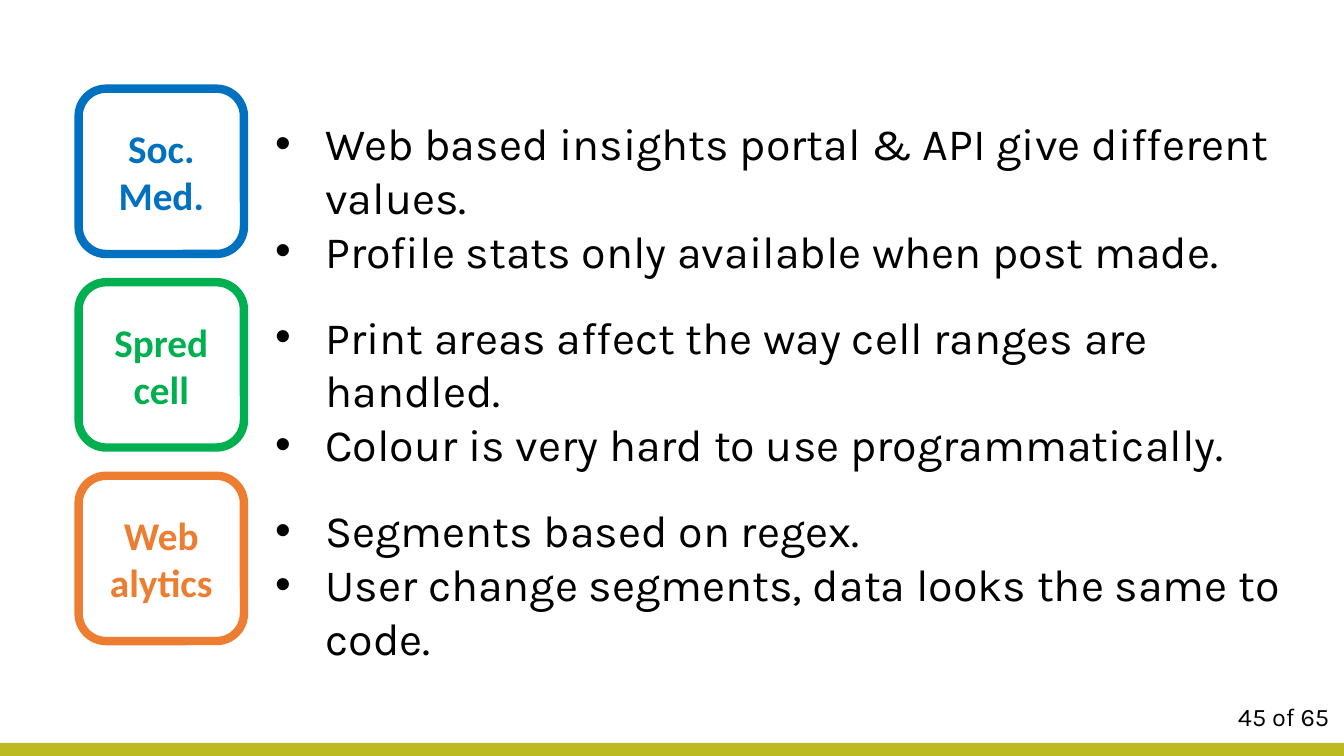
"""Build a slide of data source quirks, one badge and bullet list per source."""
from lxml.etree import SubElement as Sub
from pptx import Presentation
from pptx.dml.color import RGBColor as RGB
from pptx.enum.shapes import MSO_SHAPE as Kind
from pptx.enum.text import MSO_ANCHOR as Anchor, MSO_AUTO_SIZE as Auto, PP_ALIGN as Align
from pptx.oxml.ns import qn
from pptx.util import Emu, Pt

SCALE = 9144
WIDE, HIGH = 1333, 750
PITCH = 192
BLUE = RGB(0x00, 0x70, 0xC0)
GREEN = RGB(0x00, 0xB0, 0x50)
ORANGE = RGB(0xED, 0x7D, 0x31)
OLIVE = RGB(0xBB, 0xBB, 0x21)
WHITE = RGB(0xFF, 0xFF, 0xFF)
BLACK = RGB(0x00, 0x00, 0x00)

TOPICS = [
    ("Soc.\nMed.", BLUE,
     "Web based insights portal & API give different values.\n"
     "Profile stats only available when post made."),
    ("Spred\ncell", GREEN,
     "Print areas affect the way cell ranges are handled.\n"
     "Colour is very hard to use programmatically."),
    ("Web\nalytics", ORANGE,
     "Segments based on regex.\n"
     "User change segments, data looks the same to code."),
]


def px(num):
    return Emu(num * SCALE)


def write(frame, text, font, size, color, bold=False):
    frame.word_wrap = True
    frame.text = text
    for para in frame.paragraphs:
        for run in para.runs:
            run.font.name = font
            run.font.size = Pt(size)
            run.font.bold = bold
            run.font.color.rgb = color


def add_box(slide, kind, area, fill):
    box = slide.shapes.add_shape(kind, *map(px, area))
    box.shadow.inherit = False
    box.fill.solid()
    box.fill.fore_color.rgb = fill
    box.line.fill.background()
    return box


def add_badge(slide, top, text, color):
    badge = add_box(slide, Kind.ROUNDED_RECTANGLE, (78, top, 164, 164), WHITE)
    badge.line.color.rgb = color
    badge.line.width = Pt(6)
    frame = badge.text_frame
    frame.vertical_anchor = Anchor.MIDDLE
    write(frame, text, "Calibri", 28, color, True)
    for para in frame.paragraphs:
        para.alignment = Align.CENTER


def add_text(slide, area, text, size):
    frame = slide.shapes.add_textbox(*map(px, area)).text_frame
    frame.auto_size = Auto.SHAPE_TO_FIT_TEXT
    write(frame, text, "Karla", size, BLACK)
    return frame


def add_list(slide, top, text):
    frame = add_text(slide, (263, top, 1070, 118), text, 32)
    for para in frame.paragraphs:
        props = para._p.get_or_add_pPr()
        props.set("marL", str(px(50)))
        props.set("indent", str(px(-50)))
        Sub(props, qn("a:buFont"), typeface="Arial")
        Sub(props, qn("a:buChar"), char="•")


def main():
    deck = Presentation()
    deck.slide_width, deck.slide_height = px(WIDE), px(HIGH)
    slide = deck.slides.add_slide(deck.slide_layouts[6])
    add_box(slide, Kind.RECTANGLE, (0, 737, WIDE, 13), OLIVE)
    add_text(slide, (1218, 691, 121, 40), "45 of 65", 18)
    for row, (name, color, notes) in enumerate(TOPICS):
        add_badge(slide, 88 + row * PITCH, name, color)
        add_list(slide, 110 + row * PITCH, notes)
    deck.save("out.pptx")


if __name__ == "__main__":
    main()
